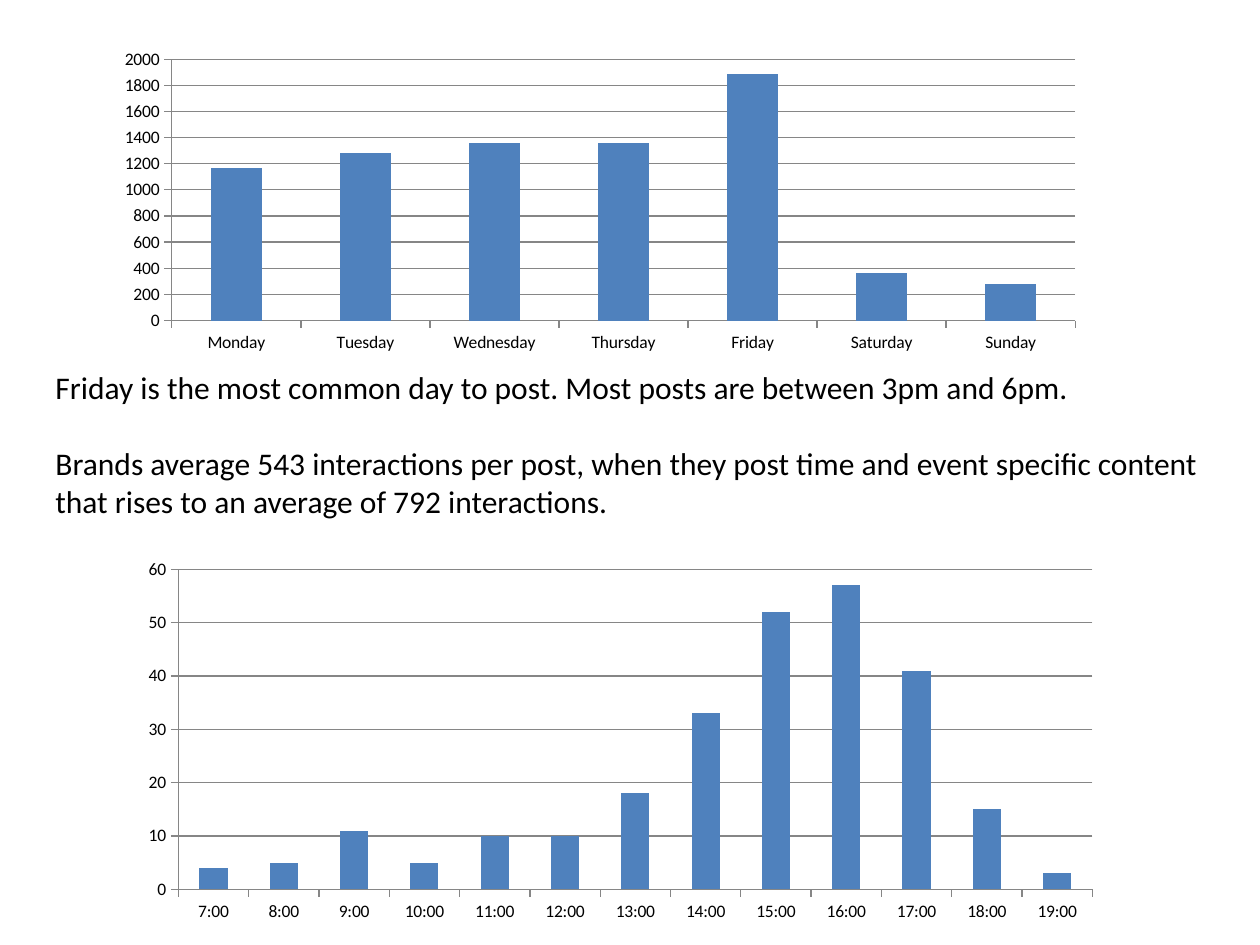
from dataclasses import dataclass

from pptx import Presentation
from pptx.chart.data import CategoryChartData
from pptx.dml.color import RGBColor
from pptx.enum.chart import XL_CHART_TYPE as ChartType, XL_TICK_MARK as TickMark
from pptx.enum.text import MSO_AUTO_SIZE as AutoSize
from pptx.slide import Slide
from pptx.util import Emu, Pt

BLACK = RGBColor(0x00, 0x00, 0x00)
BLUE = RGBColor(0x4F, 0x81, 0xBD)
GRAY = RGBColor(0x86, 0x86, 0x86)
FONT = "Calibri"
EMU_PER_PX = 914400 / 126


@dataclass(frozen=True)
class Box:
    left: int
    top: int
    width: int
    height: int

    def emu(self) -> list[Emu]:
        return [px(n) for n in (self.left, self.top, self.width, self.height)]


@dataclass(frozen=True)
class ColumnChart:
    box: Box
    categories: list[str]
    values: list[int]
    maximum: int
    step: int


HOURLY_POSTS = ColumnChart(
    Box(129, 552, 983, 377),
    [f"{hour}:00" for hour in range(7, 20)],
    [4, 5, 11, 5, 10, 10, 18, 33, 52, 57, 41, 15, 3],
    maximum=60,
    step=10,
)
DAILY_POSTS = ColumnChart(
    Box(105, 43, 990, 316),
    ["Monday", "Tuesday", "Wednesday", "Thursday", "Friday", "Saturday", "Sunday"],
    [1170, 1280, 1360, 1360, 1890, 360, 280],
    maximum=2000,
    step=200,
)
FINDINGS_BOX = Box(43, 362, 1192, 204)
FINDINGS = [
    "Friday is the most common day to post. Most posts are between 3pm and 6pm.",
    "Brands average 543 interactions per post, when they post time and event "
    "specific content that rises to an average of 792 interactions.",
]


def px(length: int) -> Emu:
    return Emu(round(length * EMU_PER_PX))


def add_column_chart(slide: Slide, column_chart: ColumnChart) -> None:
    data = CategoryChartData()
    data.categories = column_chart.categories
    data.add_series("Series 1", column_chart.values)
    chart = slide.shapes.add_chart(
        ChartType.COLUMN_CLUSTERED, *column_chart.box.emu(), data
    ).chart
    chart.has_legend = False
    chart.has_title = False
    chart.font.name = FONT
    chart.font.size = Pt(10)
    chart.font.color.rgb = BLACK

    plot = chart.plots[0]
    plot.gap_width = 150
    plot.vary_by_categories = False
    fill = plot.series[0].format.fill
    fill.solid()
    fill.fore_color.rgb = BLUE

    value_axis = chart.value_axis
    value_axis.minimum_scale = 0
    value_axis.maximum_scale = column_chart.maximum
    value_axis.major_unit = column_chart.step
    value_axis.has_major_gridlines = True
    for axis in (chart.category_axis, value_axis):
        axis.major_tick_mark = TickMark.OUTSIDE
        axis.minor_tick_mark = TickMark.NONE
    for part in (chart.category_axis, value_axis, value_axis.major_gridlines):
        part.format.line.color.rgb = GRAY
        part.format.line.width = Pt(0.75)


def add_findings(slide: Slide, box: Box, findings: list[str]) -> None:
    text_frame = slide.shapes.add_textbox(*box.emu()).text_frame
    text_frame.word_wrap = True
    text_frame.auto_size = AutoSize.SHAPE_TO_FIT_TEXT
    text_frame.text = "\n".join(findings)
    for index, paragraph in enumerate(text_frame.paragraphs):
        if index:
            paragraph.space_before = Pt(22)
        paragraph.font.name = FONT
        paragraph.font.size = Pt(18)
        paragraph.font.color.rgb = BLACK


def main() -> None:
    """Build the slide on posting days and hours."""
    presentation = Presentation()
    presentation.slide_width = px(1260)
    presentation.slide_height = px(945)
    slide = presentation.slides.add_slide(presentation.slide_layouts[6])
    for column_chart in (HOURLY_POSTS, DAILY_POSTS):
        add_column_chart(slide, column_chart)
    add_findings(slide, FINDINGS_BOX, FINDINGS)
    presentation.save("out.pptx")


if __name__ == "__main__":
    main()
